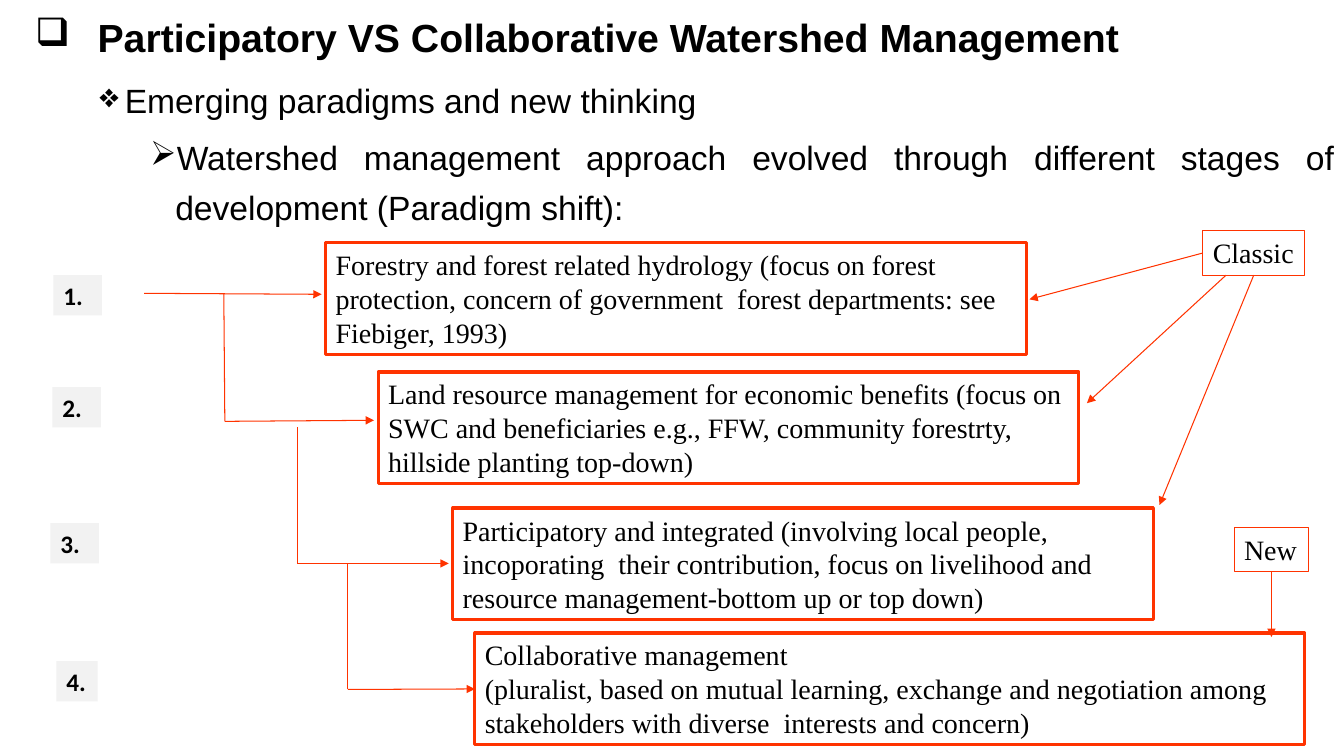
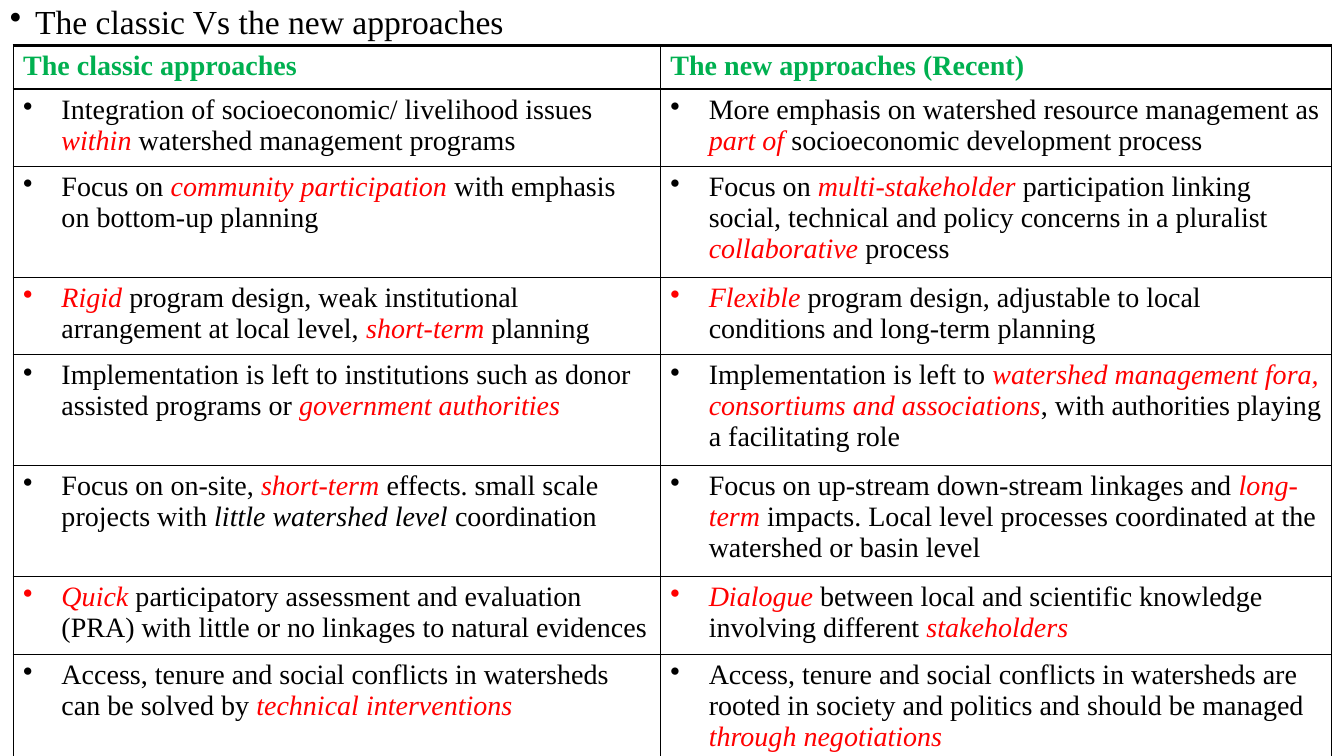
from lxml import etree
from pptx import Presentation
from pptx.dml.color import RGBColor
from pptx.enum.shapes import MSO_CONNECTOR, MSO_SHAPE
from pptx.enum.text import MSO_ANCHOR, MSO_AUTO_SIZE, PP_ALIGN
from pptx.oxml.ns import qn
from pptx.util import Inches, Pt

STRAIGHT = MSO_CONNECTOR.STRAIGHT
RECTANGLE = MSO_SHAPE.RECTANGLE
MIDDLE, TOP = MSO_ANCHOR.MIDDLE, MSO_ANCHOR.TOP
GROW = MSO_AUTO_SIZE.SHAPE_TO_FIT_TEXT
JUSTIFY, LEFT = PP_ALIGN.JUSTIFY, PP_ALIGN.LEFT

COLORS = {
    "text": "000000",
    "flow": "FF3300",
    "number": "F2F2F2",
    "header": "00B050",
    "emphasis": "FF0000",
}
SANS, SERIF, NUMBER_FONT = "Arial", "Times New Roman", "Calibri"
BOTTOM_SIDE, LEFT_SIDE = 2, 1
THIN, THICK = 0.75, 2

STAGE_HEIGHT = 1.11
# Left, top, width, paragraphs
STAGES = [
    (3.23, 2.41, 6.95, ["Forestry and forest related hydrology (focus on forest protection, "
                        "concern of government  forest departments: see Fiebiger, 1993)"]),
    (3.75, 3.69, 6.95, ["Land resource management for economic benefits (focus on SWC and "
                        "beneficiaries e.g., FFW, community forestrty, hillside planting top-down)"]),
    (4.49, 5.04, 6.95, ["Participatory and integrated (involving local people, incoporating  their "
                        "contribution, focus on livelihood and  resource management-bottom up or top down)"]),
    (4.71, 6.28, 8.23, ["Collaborative management",
                        "(pluralist, based on mutual learning, exchange and negotiation among "
                        "stakeholders with diverse  interests and concern)"]),
]
# Left, top, width
NUMBERS = [(0.53, 2.73, 0.48), (0.52, 3.84, 0.48), (0.5, 5.19, 0.48), (0.56, 6.56, 0.41)]
# Start, end
STEMS = [
    ((2.22, 2.91), (2.23, 4.18)),
    ((2.95, 4.24), (2.95, 5.59)),
    ((3.45, 5.59), (3.45, 6.84)),
]
STEP_ARROWS = [
    ((1.43, 2.91), (3.19, 2.92)),
    ((2.23, 4.18), (3.71, 4.17)),
    ((2.95, 5.59), (4.45, 5.59)),
]

COLUMN_WIDTHS = [6.42, 6.66]
ROW_HEIGHTS = [0.43, 0.76, 1.08, 0.76, 1.08, 1.08, 0.76, 1.08]
# *red italic*, *~black italic*
APPROACHES = [
    ("The classic approaches", "The new approaches (Recent)"),
    ("Integration of socioeconomic/ livelihood issues *within* watershed management programs",
     "More emphasis on watershed resource management as *part of *socioeconomic development process"),
    ("Focus on *community participation* with emphasis on bottom-up planning",
     "Focus on *multi-stakeholder *participation linking social, technical and policy concerns "
     "in a pluralist *collaborative* process"),
    ("*Rigid* program design, weak institutional arrangement at local level, *short-term* planning",
     "*Flexible* program design, adjustable to local conditions and long-term planning"),
    ("Implementation is left to institutions such as donor assisted programs or "
     "*government authorities*",
     "Implementation is left to *watershed management fora, consortiums and associations*, "
     "with authorities playing a facilitating role"),
    ("Focus on on-site, *short-term* effects. small scale projects with "
     "*~little watershed level *coordination",
     "Focus on up-stream down-stream linkages and *long-term* impacts. Local level processes "
     "coordinated at the watershed or basin level"),
    ("*Quick* participatory assessment and evaluation (PRA) with little or no linkages "
     "to natural evidences",
     "*Dialogue* between local and scientific knowledge involving different *stakeholders*"),
    ("Access, tenure and social conflicts in watersheds can be solved by "
     "*technical interventions*",
     "Access, tenure and social conflicts in watersheds are rooted in society and politics "
     "and should be managed *through negotiations*"),
]


def rgb(name):
    return RGBColor.from_string(COLORS[name])


def set_values(target, **values):
    for name, value in values.items():
        setattr(target, name, value)


def add_span(para, text, color="text", **font_values):
    span = para.add_run()
    span.text = text
    set_values(span.font, **font_values)
    span.font.color.rgb = rgb(color)


def add_marked_text(para, text, color, **font_values):
    """Add text in which asterisks enclose emphasis; a leading ~ keeps it black."""
    for index, piece in enumerate(text.split("*")):
        if not piece:
            continue
        emphasised = index % 2 == 1
        red = emphasised and not piece.startswith("~")
        add_span(para, piece.lstrip("~"), "emphasis" if red else color,
                 italic=emphasised, **font_values)


def set_indent(para, left, hanging, bullet=None):
    properties = para._p.get_or_add_pPr()
    properties.set("marL", str(Inches(left)))
    properties.set("indent", str(-Inches(hanging)))
    if bullet:
        etree.SubElement(properties, qn("a:buChar")).set("char", bullet)


def add_text_box(page, left, top, width, height, anchor=TOP):
    box = page.shapes.add_textbox(Inches(left), Inches(top), Inches(width), Inches(height))
    set_values(box.text_frame, word_wrap=True, vertical_anchor=anchor)
    return box.text_frame


def add_rectangle(page, left, top, width, height, paragraphs, fill=None, line=None,
                  wrap=False, **font_values):
    box = page.shapes.add_shape(RECTANGLE, Inches(left), Inches(top),
                                Inches(width), Inches(height))
    box.shadow.inherit = False
    if fill:
        box.fill.solid()
        box.fill.fore_color.rgb = rgb(fill)
    else:
        box.fill.background()
    if line:
        box.line.color.rgb = rgb("flow")
        box.line.width = Pt(line)
    else:
        box.line.fill.background()
    frame = box.text_frame
    set_values(frame, word_wrap=wrap, auto_size=GROW, vertical_anchor=TOP)
    for index, text in enumerate(paragraphs):
        para = frame.add_paragraph() if index else frame.paragraphs[0]
        para.alignment = LEFT
        add_span(para, text, **font_values)
    return box


def add_line(page, start, end, arrow=True, begin=None, finish=None):
    """Draw a line; begin and finish are (box, side) pairs to join."""
    points = [Inches(value) for value in (*start, *end)]
    line = page.shapes.add_connector(STRAIGHT, *points)
    line.line.color.rgb = rgb("flow")
    line.line.width = Pt(THIN)
    if arrow:
        etree.SubElement(line.line._get_or_add_ln(), qn("a:tailEnd")).set("type", "triangle")
    etree.SubElement(line._element.spPr, qn("a:effectLst"))
    if begin:
        line.begin_connect(*begin)
    if finish:
        line.end_connect(*finish)


def set_borders(cell, top, bottom):
    properties = cell._tc.get_or_add_tcPr()
    widths = {"a:lnL": THIN, "a:lnR": THIN, "a:lnT": top, "a:lnB": bottom}
    for index, (tag, width) in enumerate(widths.items()):
        border = etree.Element(qn(tag), w=str(Pt(width)))
        fill = etree.SubElement(border, qn("a:solidFill"))
        etree.SubElement(fill, qn("a:srgbClr")).set("val", COLORS["text"])
        properties.insert(index, border)


def add_headings(page):
    para = add_text_box(page, 0.25, 0.16, 12.18, 0.47, MIDDLE).paragraphs[0]
    para.line_spacing = 0.9
    set_indent(para, 0.62, 0.62, "❑")
    add_span(para, "Participatory VS Collaborative Watershed Management",
             name=SANS, size=Pt(28), bold=True)

    frame = add_text_box(page, 0.39, 0.54, 12.94, 1.8)
    points = [
        ("Emerging paradigms and new thinking", 0.75, 1.5, "❖"),
        ("Watershed management approach evolved through different stages of development "
         "(Paradigm shift):", 1.25, Pt(36), "➢"),
    ]
    for index, (text, left, spacing, bullet) in enumerate(points):
        para = frame.add_paragraph() if index else frame.paragraphs[0]
        set_values(para, alignment=JUSTIFY, line_spacing=spacing, space_before=Pt(5))
        set_indent(para, left, 0.25, bullet)
        add_span(para, text, name=SANS, size=Pt(24))


def add_paradigm_flow(page):
    serif = {"name": SERIF, "size": Pt(20)}
    stages = [add_rectangle(page, left, top, width, STAGE_HEIGHT, paragraphs,
                            line=2.25, wrap=True, **serif)
              for left, top, width, paragraphs in STAGES]
    for number, (left, top, width) in enumerate(NUMBERS, 1):
        add_rectangle(page, left, top, width, 0.4, [f"{number}."], fill="number",
                      name=NUMBER_FONT, size=Pt(18), bold=True)
    for start, end in STEMS:
        add_line(page, start, end, arrow=False)
    for start, end in STEP_ARROWS:
        add_line(page, start, end)
    add_line(page, (3.45, 6.84), (4.71, 6.84), finish=(stages[-1], LEFT_SIDE))

    classic = add_rectangle(page, 11.93, 2.29, 1.01, 0.44, ["Classic"], line=THIN, **serif)
    add_line(page, (11.93, 2.51), (10.21, 2.97), begin=(classic, LEFT_SIDE))
    add_line(page, (12.16, 2.73), (10.78, 4))
    add_line(page, (12.44, 2.73), (11.5, 5.01), begin=(classic, BOTTOM_SIDE))
    new = add_rectangle(page, 12.24, 5.23, 0.74, 0.44, ["New"], line=THIN, **serif)
    add_line(page, (12.61, 5.67), (12.61, 6.32), begin=(new, BOTTOM_SIDE))


def add_approach_table(page):
    table = page.shapes.add_table(
        len(APPROACHES), len(COLUMN_WIDTHS), Inches(0.13), Inches(0.45),
        Inches(sum(COLUMN_WIDTHS)), Inches(sum(ROW_HEIGHTS))).table
    set_values(table, first_row=False, horz_banding=False)
    for column, width in zip(table.columns, COLUMN_WIDTHS):
        column.width = Inches(width)
    last = len(APPROACHES) - 1
    for index, (row, height) in enumerate(zip(table.rows, ROW_HEIGHTS)):
        row.height = Inches(height)
        header = index == 0
        for cell, text in zip(row.cells, APPROACHES[index]):
            cell.fill.background()
            set_borders(cell, THICK if index <= 1 else THIN,
                        THICK if index in (0, last) else THIN)
            para = cell.text_frame.paragraphs[0]
            set_indent(para, 0.38, 0.38, None if header else "•")
            add_marked_text(para, text, "header" if header else "text",
                            name=SERIF, size=Pt(20), bold=header)


def build_paradigm_page(page):
    add_headings(page)
    add_paradigm_flow(page)


def build_comparison_page(page):
    para = add_text_box(page, 0, 0, 13.33, 0.45).paragraphs[0]
    set_values(para, line_spacing=0.9, space_before=Pt(10))
    set_indent(para, 0.25, 0.25, "•")
    add_span(para, "The classic Vs the new approaches", name=SERIF, size=Pt(24))
    add_approach_table(page)


def main():
    deck = Presentation()
    set_values(deck, slide_width=Inches(13.33), slide_height=Inches(7.5))
    for build_page in (build_paradigm_page, build_comparison_page):
        build_page(deck.slides.add_slide(deck.slide_layouts[6]))
    deck.save("out.pptx")


if __name__ == "__main__":
    main()
